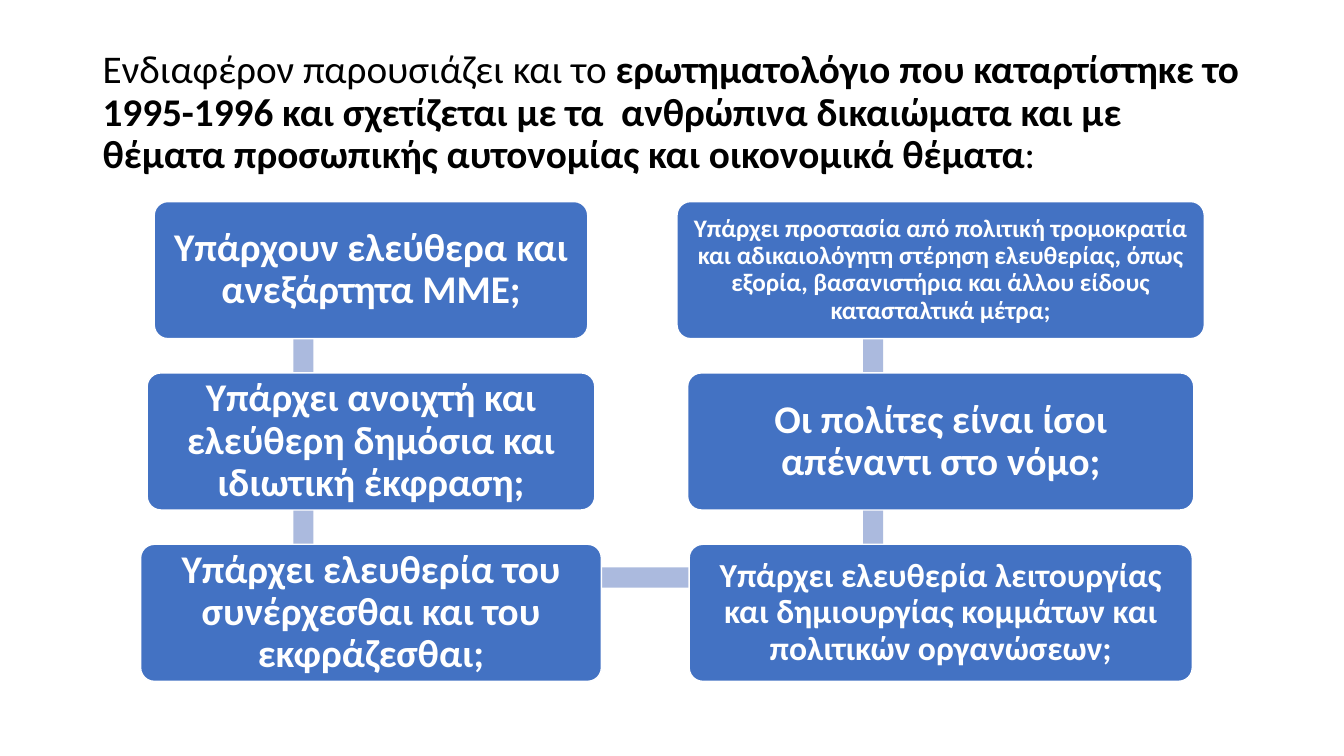
from pptx import Presentation
from pptx.util import Inches, Pt
from pptx.dml.color import RGBColor
from pptx.enum.shapes import MSO_SHAPE
from pptx.enum.text import MSO_ANCHOR, PP_ALIGN

COLORS = {"box": "4372C3", "bar": "ABBADE", "white": "FFFFFF", "black": "000000"}
TOP, STEP, HIGH, THICK = 2, 1.7, 1.36, 0.2

deck = Presentation()
deck.slide_width, deck.slide_height = Inches(13.33), Inches(7.5)
slide = deck.slides.add_slide(deck.slide_layouts[6])


def write(frame, runs, size, color, align, inset, side=None):
    """Fill a text frame with one paragraph of (text, bold) runs."""
    frame.word_wrap = True
    frame.vertical_anchor = MSO_ANCHOR.MIDDLE
    frame.margin_left = frame.margin_right = Inches(side or inset)
    frame.margin_top = frame.margin_bottom = Inches(inset)
    para = frame.paragraphs[0]
    para.alignment, para.line_spacing = align, 0.9
    for text, bold in runs:
        run = para.add_run()
        run.text = text
        run.font.name, run.font.size, run.font.bold = "Calibri", Pt(size), bold
        run.font.color.rgb = RGBColor.from_string(COLORS[color])


def block(kind, left, top, width, height, color):
    """Add a plain filled shape."""
    shape = slide.shapes.add_shape(kind, *map(Inches, (left, top, width, height)))
    shape.shadow.inherit = False
    shape.fill.solid()
    shape.fill.fore_color.rgb = RGBColor.from_string(COLORS[color])
    shape.line.fill.background()
    return shape


# Title
title = slide.shapes.add_textbox(Inches(0.92), Inches(0.4), Inches(11.5), Inches(1.45))
write(title.text_frame, [
    ("Ενδιαφέρον παρουσιάζει και το ", False),
    ("ερωτηματολόγιο που καταρτίστηκε το 1995-1996 και σχετίζεται με τα  ανθρώπινα "
     "δικαιώματα και με θέματα προσωπικής αυτονομίας και οικονομικά θέματα", True),
    (":", False)], 28, "black", PP_ALIGN.LEFT, 0.05, side=0.1)

# Bars that join the boxes, behind them
for left in (2.91, 8.56):
    for row in range(2):
        block(MSO_SHAPE.RECTANGLE, left, 2.33 + row * STEP, THICK, 1.69, "bar")
block(MSO_SHAPE.RECTANGLE, 3.01, 5.63, 5.63, THICK, "bar")

# Question boxes: column centre, then width, size, inset and text from the top down
columns = [
    (3.68, [
        (4.3, 28, 0.12, "Υπάρχουν ελεύθερα και ανεξάρτητα ΜΜΕ;"),
        (4.44, 28, 0.12, "Υπάρχει ανοιχτή και ελεύθερη δημόσια και ιδιωτική έκφραση;"),
        (4.57, 28, 0.12, "Υπάρχει ελευθερία του συνέρχεσθαι και του εκφράζεσθαι;")]),
    (9.33, [
        (5.23, 18, 0.07, "Υπάρχει προστασία από πολιτική τρομοκρατία και αδικαιολόγητη "
         "στέρηση ελευθερίας, όπως εξορία, βασανιστήρια και άλλου είδους "
         "κατασταλτικά μέτρα;"),
        (5.02, 28, 0.12, "Οι πολίτες είναι ίσοι απέναντι στο νόμο;"),
        (4.99, 24, 0.1, "Υπάρχει ελευθερία λειτουργίας και δημιουργίας κομμάτων και "
         "πολιτικών οργανώσεων;")]),
]
for centre, items in columns:
    for row, (width, size, inset, text) in enumerate(items):
        box = block(MSO_SHAPE.ROUNDED_RECTANGLE, centre - width / 2, TOP + row * STEP,
                    width, HIGH, "box")
        box.adjustments[0] = 0.1
        box.line.color.rgb = RGBColor.from_string(COLORS["white"])
        box.line.width = Pt(1)
        write(box.text_frame, [(text, True)], size, "white", PP_ALIGN.CENTER, inset)

deck.save("out.pptx")
